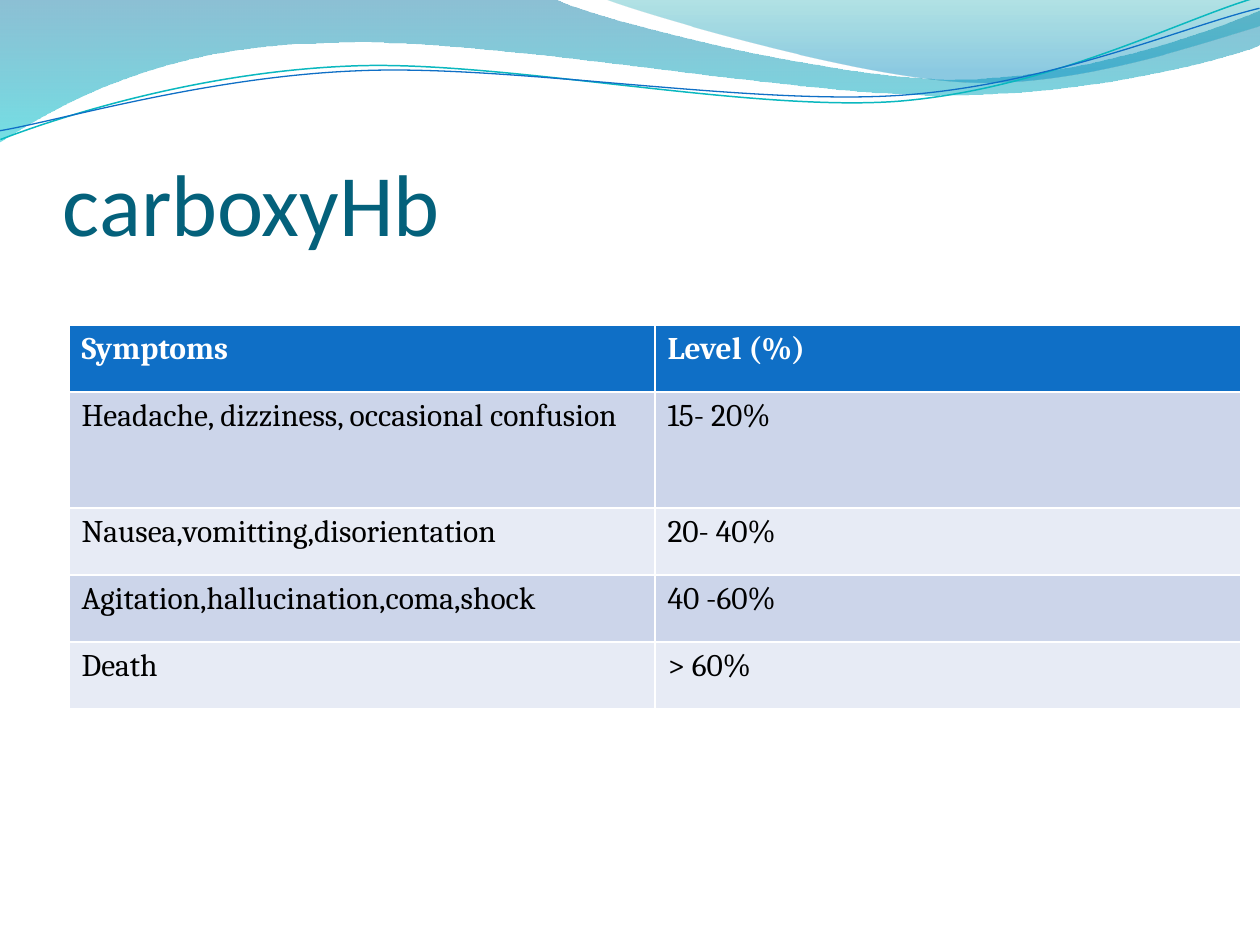
from lxml import etree
from pptx import Presentation
from pptx.dml.color import RGBColor
from pptx.enum.text import MSO_ANCHOR
from pptx.oxml.ns import qn
from pptx.util import Pt

PX = 914400 // 126  # EMU in one px
STRAND_TILT = 357.3
BOTTOM = MSO_ANCHOR.BOTTOM

WHITE = RGBColor(0xFF, 0xFF, 0xFF)
BLACK = RGBColor(0x00, 0x00, 0x00)
TITLE_TEAL = RGBColor(0x04, 0x61, 0x7B)
BLUE = RGBColor(0x0F, 0x6F, 0xC6)
LINE_TEAL = RGBColor(0x0A, 0xB8, 0xBF)
BAND_DARK = RGBColor(0xCC, 0xD5, 0xEA)
BAND_LIGHT = RGBColor(0xE7, 0xEB, 0xF5)
WAVE_BLUE = RGBColor(0x00, 0x74, 0xA1)
WAVE_CYAN = RGBColor(0x00, 0xC6, 0xCF)
CREST_TEAL = RGBColor(0x00, 0xA1, 0xA9)
CREST_BLUE = RGBColor(0x00, 0x8B, 0xBF)


def write_text(frame, text, font, size, color, bold=False):
    run = frame.paragraphs[0].add_run()
    run.text = text
    run.font.name = font
    run.font.size = Pt(size)
    run.font.color.rgb = color
    run.font.bold = bold


def add_wave(shapes, start, segments, closed):
    """Draw an outline; a segment of one point is straight, of three a Bézier curve."""
    builder = shapes.build_freeform(*start, scale=PX)
    builder.add_line_segments([point for segment in segments for point in segment],
                              close=closed)
    wave = builder.convert_to_shape()
    wave.shadow.inherit = False
    steps = iter(list(wave._element.spPr.iter(qn("a:lnTo"))))
    for segment in segments:
        curve = next(steps)
        if len(segment) == 3:
            curve_steps = [curve, next(steps), next(steps)]
            bezier = etree.Element(qn("a:cubicBezTo"))
            curve.addprevious(bezier)
            for step in curve_steps:
                bezier.append(step[0])
                step.getparent().remove(step)
    return wave


prs = Presentation()
prs.slide_width, prs.slide_height = 1260 * PX, 945 * PX
slide = prs.slides.add_slide(prs.slide_layouts[6])
shapes = slide.shapes

# Header waves: start, segments, gradient stops (position, colour, opacity %)
bands = [
    ((0, 0),
     [[(554, -1)],
      [(600, 21), (837, 79), (955, 79)],
      [(1075, 79), (1207, 33), (1260, 11)],
      [(1261, 45)],
      [(1239, 55), (1096, 96), (940, 95)],
      [(784, 95), (481, 35), (324, 43)],
      [(163, 45), (58, 105), (-1, 142)]],
     [(0, WAVE_BLUE, 45), (1, WAVE_CYAN, 55)]),
    ((604, -1),
     [[(641, 14), (859, 78), (969, 82)],
      [(1079, 87), (1211, 40), (1260, 26)],
      [(1260, 0)]],
     [(0, CREST_TEAL, 30), (0.8, CREST_BLUE, 45)]),
]
for start, segments, stops in bands:
    band = add_wave(shapes, start, segments, closed=True)
    band.line.fill.background()
    band.fill.gradient()
    band.fill.gradient_angle = 270
    for stop, (position, color, _) in zip(band.fill.gradient_stops, stops):
        stop.position = position
        stop.color.rgb = color
    for color_node, (_, _, opacity) in zip(band._element.spPr.iter(qn("a:srgbClr")), stops):
        etree.SubElement(color_node, qn("a:alpha"), val=str(opacity * 1000))

# Thin strands, given before their tilt
strands = [
    ((-2, 110),
     [[(58, 90), (199, 52), (350, 53)],
      [(499, 53), (745, 118), (896, 114)],
      [(1048, 109), (1184, 45), (1260, 27)]],
     LINE_TEAL, 0.85),
    ((-2, 101),
     [[(57, 94), (207, 57), (357, 58)],
      [(509, 58), (750, 112), (902, 108)],
      [(1052, 104), (1188, 52), (1262, 38)]],
     BLUE, 0.75),
]
for start, segments, color, width in strands:
    strand = add_wave(shapes, start, segments, closed=False)
    strand.rotation = STRAND_TILT
    strand.fill.background()
    strand.line.color.rgb = color
    strand.line.width = Pt(width)

# Title
title = shapes.add_textbox(63 * PX, 97 * PX, 1134 * PX, 157 * PX).text_frame
title.word_wrap = True
title.vertical_anchor = BOTTOM
title.margin_left = title.margin_right = title.margin_bottom = 0
title.margin_top = 6 * PX
write_text(title, "carboxyHb", font="Calibri", size=50, color=TITLE_TEAL)

# Symptoms by carboxyhaemoglobin level; the default table style draws the white borders
symptom_rows = [
    ("Symptoms", "Level (%)"),
    ("Headache, dizziness, occasional confusion", "15- 20%"),
    ("Nausea,vomitting,disorientation", "20- 40%"),
    ("Agitation,hallucination,coma,shock", "40 -60%"),
    ("Death", "> 60%"),
]
row_heights = [67, 116, 67, 67, 67]
table = shapes.add_table(len(symptom_rows), 2, 69 * PX, 325 * PX,
                         1172 * PX, sum(row_heights) * PX).table
for column in table.columns:
    column.width = 586 * PX

for r, (texts, height) in enumerate(zip(symptom_rows, row_heights)):
    table.rows[r].height = height * PX
    header = r == 0
    row_fill = BLUE if header else BAND_DARK if r % 2 else BAND_LIGHT
    for c, text in enumerate(texts):
        cell = table.cell(r, c)
        cell.fill.solid()
        cell.fill.fore_color.rgb = row_fill
        write_text(cell.text_frame, text, font="Cambria", size=18,
                   color=WHITE if header else BLACK, bold=header)

prs.save("out.pptx")
